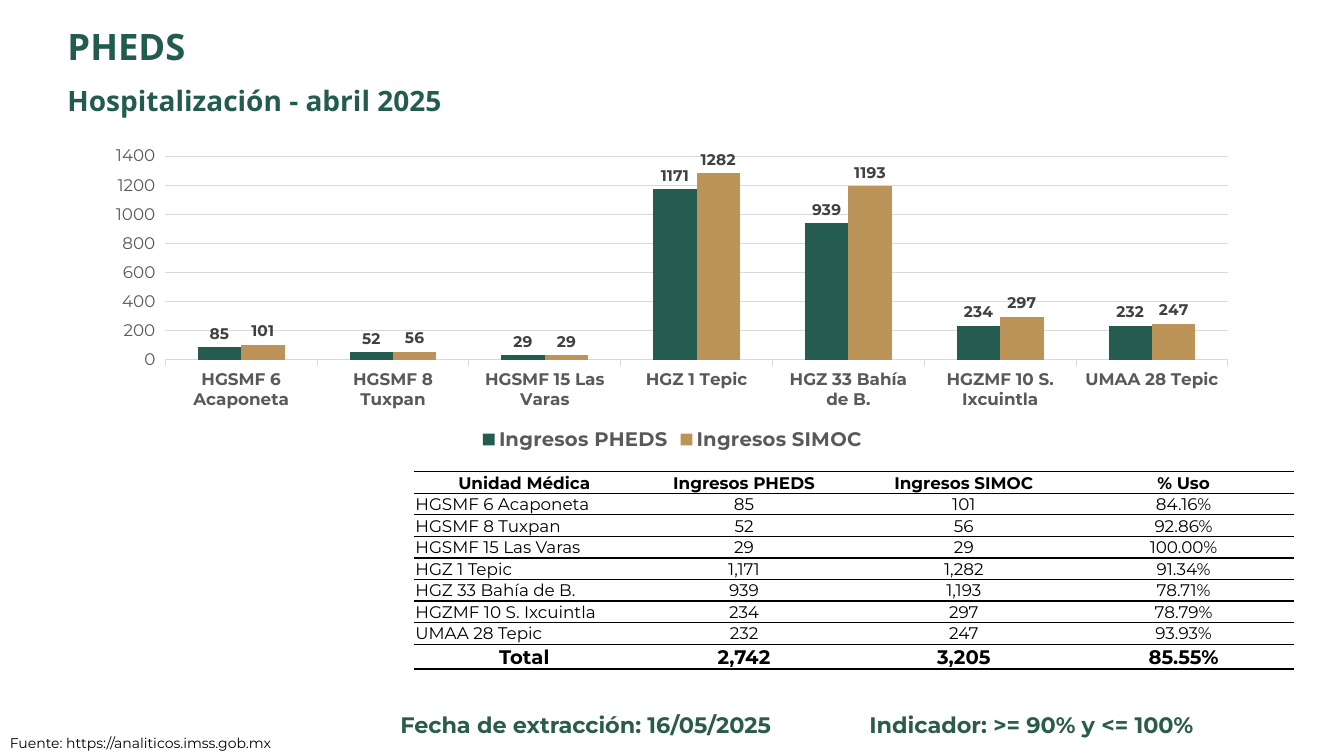
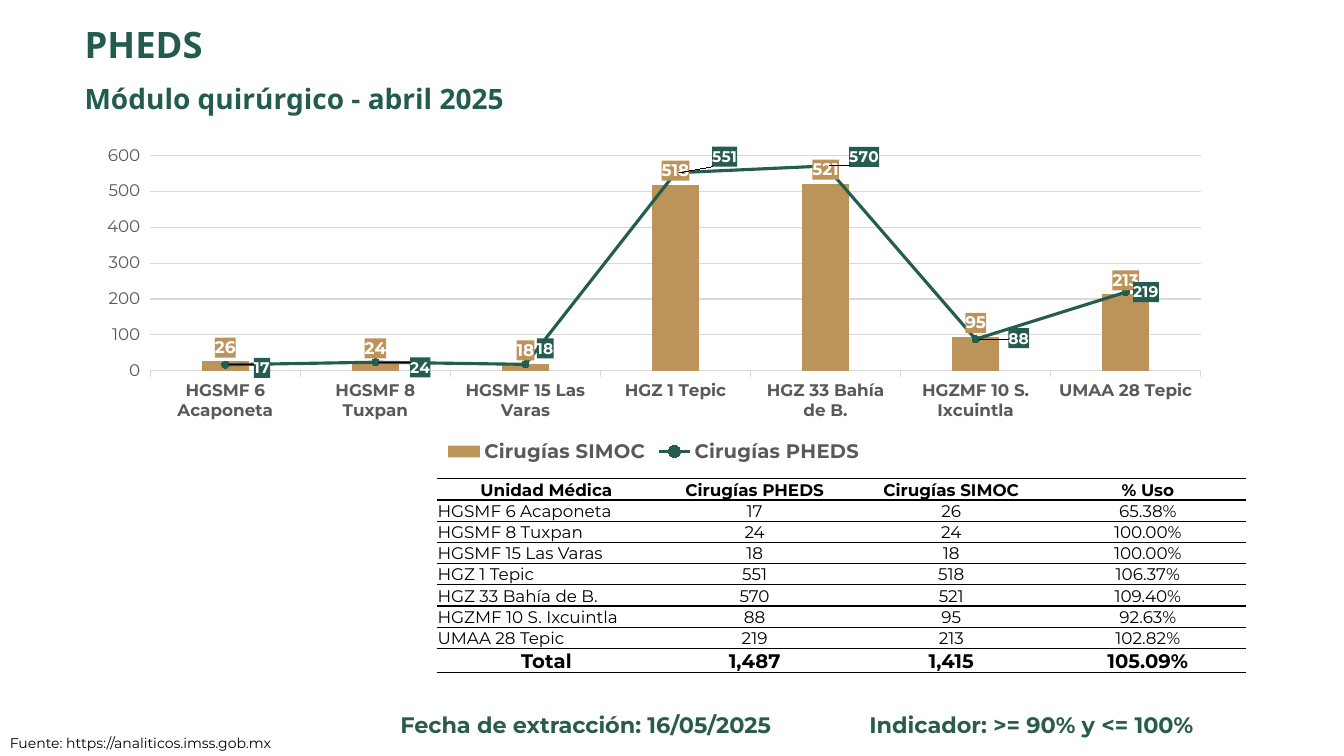
from lxml import etree
from pptx import Presentation
from pptx.chart.data import CategoryChartData
from pptx.dml.color import RGBColor
from pptx.enum import chart as ch, text
from pptx.oxml import parse_xml
from pptx.oxml.ns import nsdecls, qn
from pptx.util import Emu, Pt

PX = 9144
GREEN, GOLD, FOOTER_GREEN = "245C4F", "BC945A", "2A5C4B"
TITLE_GREEN, GRAY, DARK, GRID = "235C4F", "595959", "404040", "D9D9D9"
BLACK, WHITE = "000000", "FFFFFF"
BODY, HEADING = "Montserrat", "Noto Sans"
UNITS = ["HGSMF 6 Acaponeta", "HGSMF 8 Tuxpan", "HGSMF 15 Las Varas", "HGZ 1 Tepic",
         "HGZ 33 Bahía de B.", "HGZMF 10 S. Ixcuintla", "UMAA 28 Tepic"]
ADMISSIONS = {"Ingresos PHEDS": [85, 52, 29, 1171, 939, 234, 232],
              "Ingresos SIMOC": [101, 56, 29, 1282, 1193, 297, 247]}
SURGERIES = {"Cirugías PHEDS": [17, 24, 18, 551, 570, 88, 219],
             "Cirugías SIMOC": [26, 24, 18, 518, 521, 95, 213]}
LABEL_SHIFTS = [(21, 3), (27, 5), (4, -16), (29, -16), (16, -9), (25, -1)]


def px(*lengths):
    """Turn px lengths into EMU."""
    return [Emu(length * PX) for length in lengths]


def rgb(color):
    """Return the colour for a hex string."""
    return RGBColor.from_string(color)


def set_font(font, size, color, bold=False, name=BODY):
    """Apply one text format."""
    for key, value in {"size": Pt(size), "bold": bold, "name": name}.items():
        setattr(font, key, value)
    font.color.rgb = rgb(color)


def add_text(slide, box, words, size, color, bold=True, name=BODY, wrap=True, grow=True,
             align=text.PP_ALIGN.LEFT, spacing=1.0):
    """Add a one-paragraph text box."""
    frame = slide.shapes.add_textbox(*px(*box)).text_frame
    frame.word_wrap = wrap
    frame.auto_size = text.MSO_AUTO_SIZE.SHAPE_TO_FIT_TEXT if grow else text.MSO_AUTO_SIZE.NONE
    paragraph = frame.paragraphs[0]
    paragraph.alignment = align
    paragraph.line_spacing = spacing
    run = paragraph.add_run()
    run.text = words
    set_font(run.font, size, color, bold, name)


def add_titles(slide, left, top, subtitle):
    """Add the title and the subtitle."""
    for offset, words, size in ((0, "PHEDS", 26), (58, subtitle, 20)):
        add_text(slide, (left, top + offset, 948, 49), words, size, TITLE_GREEN,
                 name=HEADING, grow=False, spacing=0.9)


def add_footer(slide):
    """Add the source, the date and the indicator."""
    add_text(slide, (0, 724, 292, 27), "Fuente: https://analiticos.imss.gob.mx", 10, BLACK,
             bold=False, wrap=False)
    for left, width, words in ((329, 504, "Fecha de extracción: 16/05/2025"),
                               (734, 578, "Indicador: >= 90% y <= 100%")):
        add_text(slide, (left, 701, width, 37), words, 16, FOOTER_GREEN,
                 align=text.PP_ALIGN.CENTER)


def rule_cell(cell):
    """Draw black rules above and below a clear cell."""
    properties = cell._tc.get_or_add_tcPr()
    for side in ("lnL", "lnR", "lnT", "lnB"):
        line = etree.SubElement(properties, qn(f"a:{side}"), w=str(Pt(1)))
        if side in ("lnL", "lnR"):
            etree.SubElement(line, qn("a:noFill"))
        else:
            fill = etree.SubElement(line, qn("a:solidFill"))
            etree.SubElement(fill, qn("a:srgbClr"), val=BLACK)
    cell.fill.background()


def usage_rows(data):
    """Return the table rows, with usage shares and the total."""
    used, total = data.values()
    counts = list(zip(UNITS, used, total)) + [("Total", sum(used), sum(total))]
    body = [(unit, f"{a:,}", f"{b:,}", f"{a / b:.2%}") for unit, a, b in counts]
    return [("Unidad Médica", *data, "% Uso"), *body]


def add_usage_table(slide, left, top, widths, data):
    """Add the table of counts per unit."""
    rows = usage_rows(data)
    box = px(left, top, sum(widths), 21 * len(rows))
    table = slide.shapes.add_table(len(rows), len(widths), *box).table
    table.first_row = table.horz_banding = False
    for column, width in zip(table.columns, px(*widths)):
        column.width = width
    margins = dict(zip(("margin_left", "margin_right", "margin_top", "margin_bottom"),
                       px(1, 1, 1, 0)))
    for r, row in enumerate(rows):
        is_total = r == len(rows) - 1
        is_strong = r == 0 or is_total
        table.rows[r].height = Emu(21 * PX)
        for c, words in enumerate(row):
            cell = table.cell(r, c)
            is_unit = c == 0 and not is_strong
            for key, value in margins.items():
                setattr(cell, key, value)
            cell.vertical_anchor = text.MSO_ANCHOR.TOP if is_unit else text.MSO_ANCHOR.MIDDLE
            paragraph = cell.text_frame.paragraphs[0]
            paragraph.alignment = text.PP_ALIGN.LEFT if is_unit else text.PP_ALIGN.CENTER
            run = paragraph.add_run()
            run.text = words
            set_font(run.font, 14 if is_total else 12, BLACK, is_strong)
            rule_cell(cell)


def manual_layout(**values):
    """Build a manual chart layout."""
    layout = etree.Element(qn("c:layout"))
    manual = etree.SubElement(layout, qn("c:manualLayout"))
    for key, value in values.items():
        etree.SubElement(manual, qn(f"c:{key}"), val=str(value))
    return layout


def place_plot(chart, box, plot):
    """Set the inner plot area from slide positions."""
    area = chart.element.chart.plotArea
    for old in area.findall(qn("c:layout")):
        area.remove(old)
    left, top, width, height = box
    area.insert(0, manual_layout(
        layoutTarget="inner", xMode="edge", yMode="edge",
        x=round((plot[0] - left) / width, 4), y=round((plot[1] - top) / height, 4),
        w=round(plot[2] / width, 4), h=round(plot[3] / height, 4)))


def style_axes(chart, maximum, step):
    """Format both axes and the grid."""
    units, values = chart.category_axis, chart.value_axis
    set_font(units.tick_labels.font, 12, GRAY, True)
    set_font(values.tick_labels.font, 12, GRAY)
    for key, value in {"minimum_scale": 0, "maximum_scale": maximum, "major_unit": step}.items():
        setattr(values, key, value)
    values.format.line.fill.background()
    for line in (units.format.line, values.major_gridlines.format.line):
        line.color.rgb = rgb(GRID)
        line.width = Pt(0.75)


def add_column_chart(slide, box, plot, data, colors, gap, scale):
    """Add a clustered column chart with a legend."""
    content = CategoryChartData()
    content.categories = UNITS
    for name, values in data.items():
        content.add_series(name, values)
    chart = slide.shapes.add_chart(ch.XL_CHART_TYPE.COLUMN_CLUSTERED, *px(*box), content).chart
    chart.has_title = False
    set_font(chart.font, 10, BLACK)
    chart.has_legend = True
    chart.legend.position = ch.XL_LEGEND_POSITION.BOTTOM
    chart.legend.include_in_layout = False
    set_font(chart.legend.font, 14, GRAY, True)
    columns = chart.plots[0]
    for key, value in {"gap_width": gap, "overlap": 0, "vary_by_categories": False}.items():
        setattr(columns, key, value)
    for series, color in zip(columns.series, colors):
        series.format.fill.solid()
        series.format.fill.fore_color.rgb = rgb(color)
    style_axes(chart, *scale)
    place_plot(chart, box, plot)
    return chart


def label_values(series, size, color, position):
    """Show the values of a series."""
    labels = series.data_labels
    labels.show_value = True
    labels.position = position
    set_font(labels.font, size, color, True)


def fill_labels(series, color):
    """Put a solid fill behind every label of a series."""
    for label_text in series._element.xpath("./c:dLbls//c:txPr"):
        label_text.addprevious(parse_xml(
            f'<c:spPr {nsdecls("c", "a")}><a:solidFill><a:srgbClr val="{color}"/>'
            '</a:solidFill></c:spPr>'))


def turn_into_line(chart):
    """Move the last column series to a line plot and return it."""
    columns = chart.plots[0]._element
    moved = columns.findall(qn("c:ser"))[-1]
    for unwanted in moved.findall(qn("c:invertIfNegative")) + moved.findall(qn("c:spPr")):
        moved.remove(unwanted)
    lines = parse_xml(f'<c:lineChart {nsdecls("c")}><c:grouping val="stacked"/>'
                      '<c:varyColors val="0"/><c:marker val="1"/></c:lineChart>')
    lines.insert(2, moved)
    for axis in columns.findall(qn("c:axId")):
        etree.SubElement(lines, qn("c:axId"), val=axis.get("val"))
    columns.addnext(lines)
    return chart.plots[1].series[0]


def style_line(series, color):
    """Format the line and its round markers."""
    series.smooth = False
    series.format.line.color.rgb = rgb(color)
    series.format.line.width = Pt(2.25)
    series.marker.style = ch.XL_MARKER_STYLE.CIRCLE
    series.marker.size = 5
    series.marker.format.fill.solid()
    series.marker.format.fill.fore_color.rgb = rgb(color)
    series.marker.format.line.color.rgb = rgb(color)


def shift_labels(series, shifts, width, height):
    """Move the labels of the first points by px."""
    for index, (dx, dy) in enumerate(shifts):
        label = series.points[index].data_label
        set_font(label.font, 11, WHITE, True)
        label.position = ch.XL_LABEL_POSITION.RIGHT
        number = series._element.xpath(f"./c:dLbls/c:dLbl/c:idx[@val='{index}']")[0]
        number.addnext(manual_layout(x=round(dx / width, 4), y=round(dy / height, 4)))


def build_admissions(slide):
    """Build the hospital admissions slide."""
    add_titles(slide, 57, 24, "Hospitalización - abril 2025")
    add_usage_table(slide, 411, 468, [218] * 4, ADMISSIONS)
    chart = add_column_chart(slide, (92, 139, 1150, 313), (164, 155, 1054, 202),
                             ADMISSIONS, (GREEN, GOLD), 150, (1400, 200))
    for series in chart.plots[0].series:
        label_values(series, 11, DARK, ch.XL_LABEL_POSITION.OUTSIDE_END)


def build_surgeries(slide):
    """Build the surgery slide."""
    add_titles(slide, 74, 22, "Módulo quirúrgico - abril 2025")
    add_usage_table(slide, 433, 475, [218] + [195] * 3, SURGERIES)
    box = (84, 139, 1129, 325)
    chart = add_column_chart(slide, box, (149, 154, 1042, 214),
                             dict(reversed(SURGERIES.items())), (GOLD, GREEN), 219, (600, 100))
    recorded = turn_into_line(chart)
    style_line(recorded, GREEN)
    label_values(recorded, 11, WHITE, ch.XL_LABEL_POSITION.RIGHT)
    shift_labels(recorded, LABEL_SHIFTS, *box[2:])
    fill_labels(recorded, GREEN)
    expected = chart.plots[0].series[0]
    label_values(expected, 12, WHITE, ch.XL_LABEL_POSITION.OUTSIDE_END)
    fill_labels(expected, GOLD)


def main():
    """Build and save the presentation."""
    deck = Presentation()
    deck.slide_width, deck.slide_height = px(1333, 750)
    for build in (build_admissions, build_surgeries):
        slide = deck.slides.add_slide(deck.slide_layouts[6])
        build(slide)
        add_footer(slide)
    deck.save("out.pptx")


if __name__ == "__main__":
    main()
